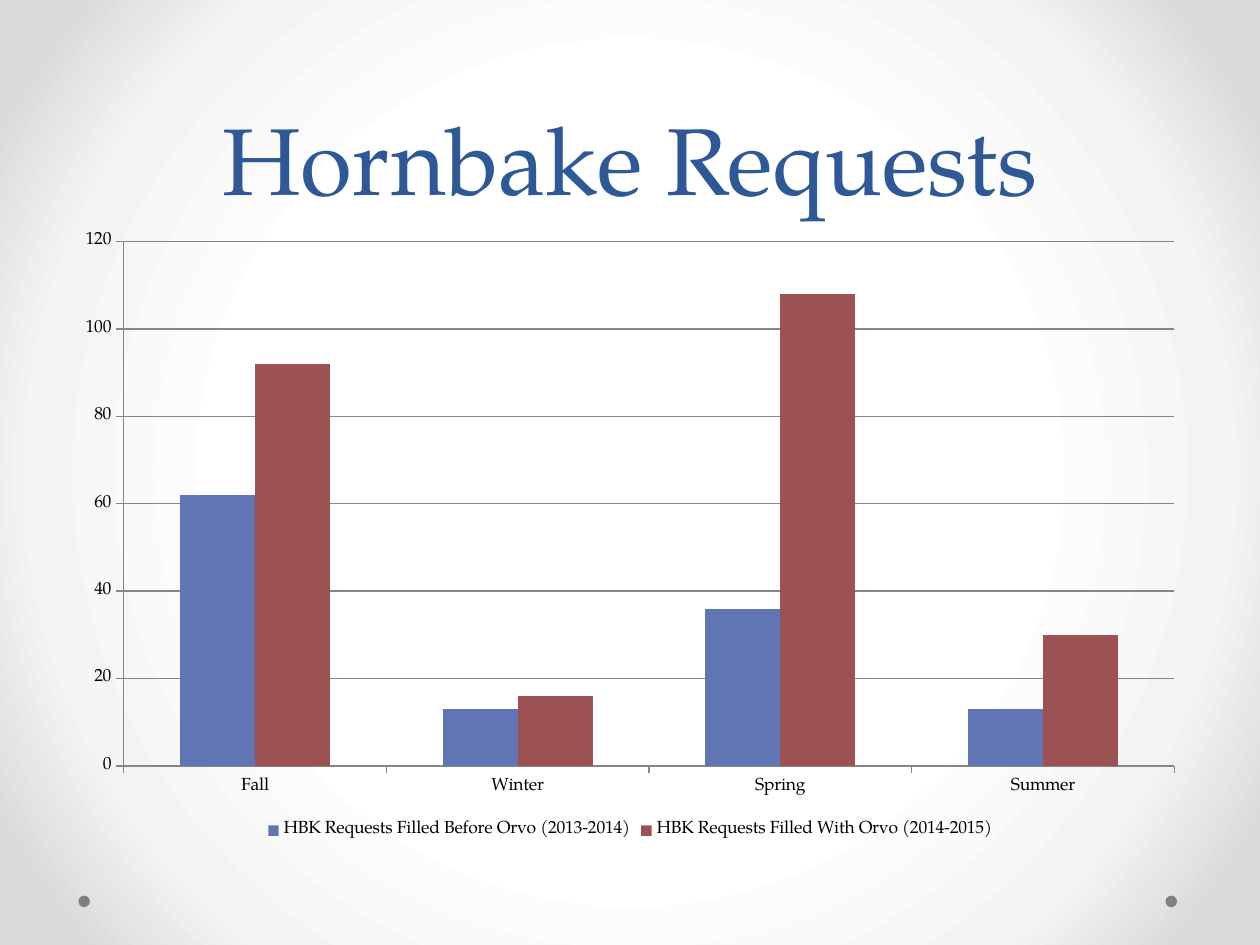
from dataclasses import dataclass

from lxml.etree import SubElement
from pptx import Presentation
from pptx.chart.data import CategoryChartData
from pptx.dml.color import RGBColor
from pptx.enum.chart import XL_CHART_TYPE, XL_LEGEND_POSITION, XL_TICK_MARK
from pptx.enum.shapes import MSO_SHAPE
from pptx.enum.text import MSO_ANCHOR, PP_ALIGN
from pptx.oxml.ns import qn
from pptx.util import Pt


@dataclass(frozen=True)
class Theme:
    font: str = "TeX Gyre Pagella"
    title_size: float = 54
    title_leading: float = 58
    chart_size: float = 10
    title: str = "2F5897"
    text: str = "000000"
    axis: str = "868686"
    dot: str = "808080"
    series: tuple = ("6076B4", "9C5252")
    backdrop: tuple = ((50, "FFFFFF"), (76, "F4F4F4"), (92, "DADADA"))


def color(value):
    return RGBColor.from_string(value)


def write_text(para, text, font, size, ink, align=PP_ALIGN.CENTER, leading=None):
    para.alignment = align
    if leading:
        para.line_spacing = Pt(leading)
    span = para.add_run()
    span.text = text
    span.font.name = font
    span.font.size = Pt(size)
    span.font.color.rgb = color(ink)


class SlideBuilder:
    def __init__(self, page, theme):
        self.page = page
        self.theme = theme

    def backdrop(self):
        """Fill the background with a circular gradient from the centre."""
        fill = self.page.background.fill
        fill.gradient()
        gradient = next(self.page.element.iter(qn("a:gradFill")))
        for child in list(gradient):
            gradient.remove(child)
        stops = SubElement(gradient, qn("a:gsLst"))
        for percent, value in self.theme.backdrop:
            stop = SubElement(stops, qn("a:gs"), pos=str(percent * 1000))
            SubElement(stop, qn("a:srgbClr"), val=value)
        circle = SubElement(gradient, qn("a:path"), path="circle")
        SubElement(circle, qn("a:fillToRect"), l="50000", t="50000", r="50000", b="50000")

    def dot(self, left, top, size):
        shape = self.page.shapes.add_shape(
            MSO_SHAPE.OVAL, Pt(left), Pt(top), Pt(size), Pt(size))
        shape.shadow.inherit = False
        shape.fill.solid()
        shape.fill.fore_color.rgb = color(self.theme.dot)
        shape.line.fill.background()

    def title(self, text, left, top, width, height):
        box = self.page.shapes.add_textbox(Pt(left), Pt(top), Pt(width), Pt(height))
        frame = box.text_frame
        frame.word_wrap = True
        frame.vertical_anchor = MSO_ANCHOR.BOTTOM
        write_text(frame.paragraphs[0], text, font=self.theme.font,
                   size=self.theme.title_size, ink=self.theme.title,
                   leading=self.theme.title_leading)

    def column_chart(self, categories, series, left, top, width, height):
        data = CategoryChartData()
        data.categories = categories
        for name, values in series.items():
            data.add_series(name, values)
        chart = self.page.shapes.add_chart(
            XL_CHART_TYPE.COLUMN_CLUSTERED,
            Pt(left), Pt(top), Pt(width), Pt(height), data).chart
        chart.has_title = False
        chart.font.name = self.theme.font
        chart.font.size = Pt(self.theme.chart_size)
        chart.font.color.rgb = color(self.theme.text)
        chart.has_legend = True
        chart.legend.position = XL_LEGEND_POSITION.BOTTOM
        chart.legend.include_in_layout = False

        plot = chart.plots[0]
        plot.gap_width = 150
        plot.overlap = 0
        plot.vary_by_categories = False
        for column, value in zip(plot.series, self.theme.series):
            column.format.fill.solid()
            column.format.fill.fore_color.rgb = color(value)

        scale = chart.value_axis
        scale.minimum_scale, scale.maximum_scale, scale.major_unit = 0, 120, 20
        scale.has_major_gridlines = True
        lines = [scale.major_gridlines.format.line]
        for axis in (chart.category_axis, scale):
            axis.major_tick_mark = XL_TICK_MARK.OUTSIDE
            axis.minor_tick_mark = XL_TICK_MARK.NONE
            lines.append(axis.format.line)
        for line in lines:
            line.color.rgb = color(self.theme.axis)
            line.width = Pt(0.75)


def main():
    deck = Presentation()
    deck.slide_width, deck.slide_height = Pt(720), Pt(540)
    page = deck.slides.add_slide(deck.slide_layouts[6])
    builder = SlideBuilder(page, Theme())
    builder.backdrop()
    for left in (666, 44.8):
        builder.dot(left, 511.8, 6.6)
    builder.title("Hornbake Requests", 36, 0, 648, 126)
    builder.column_chart(
        ["Fall", "Winter", "Spring", "Summer"],
        {"HBK Requests Filled Before Orvo (2013-2014)": (62, 13, 36, 13),
         "HBK Requests Filled With Orvo (2014-2015)": (92, 16, 108, 30)},
        36, 126, 648, 356.4)
    deck.save("out.pptx")


if __name__ == "__main__":
    main()
